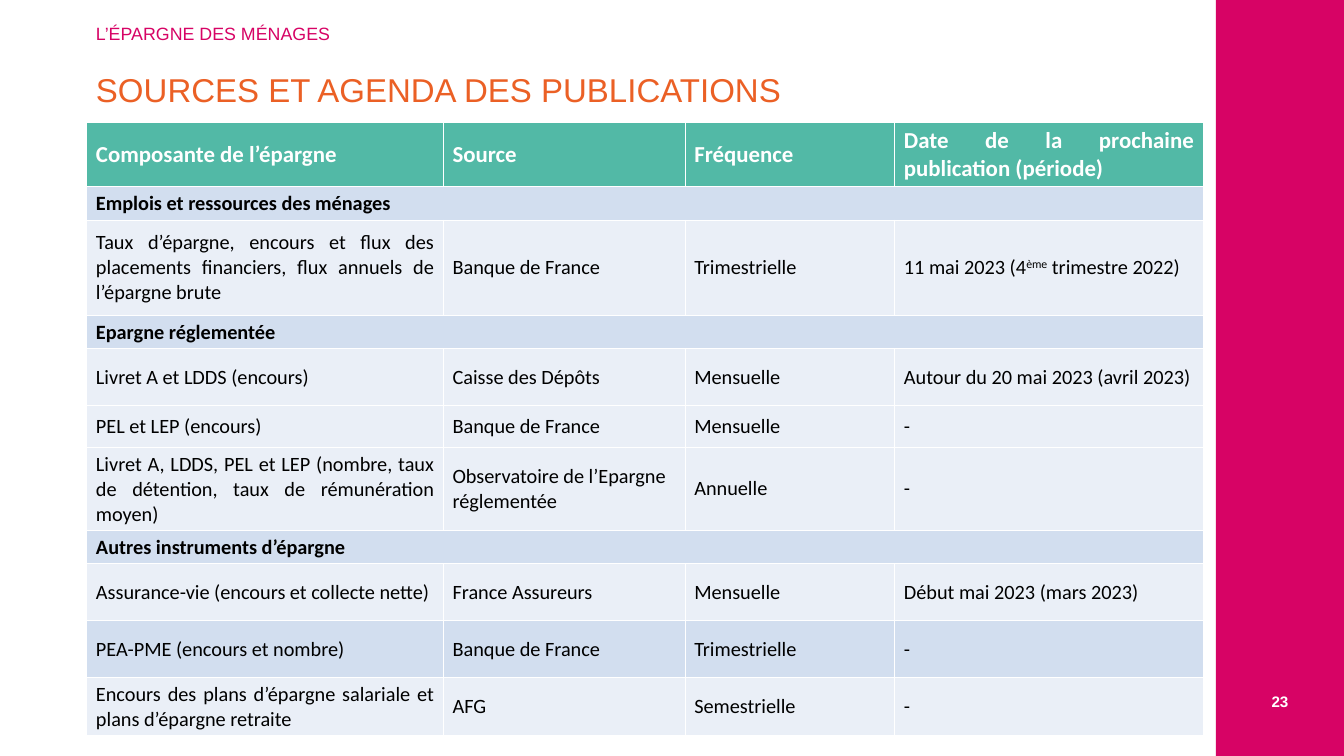
"""Build the slide listing household savings sources and their publication dates."""
import dataclasses
import typing

import pptx
import pptx.dml.color
import pptx.enum.shapes
import pptx.enum.text
import pptx.util

Pt = pptx.util.Pt
Align = pptx.enum.text.PP_ALIGN


@dataclasses.dataclass(frozen=True)
class Theme:
    """Colours, fonts and type sizes of the slide."""
    magenta: str = "D70365"
    orange: str = "EB6025"
    green: str = "52B9A6"
    band: str = "D2DEEF"
    pale: str = "EAEFF7"
    white: str = "FFFFFF"
    black: str = "000000"
    heading_font: str = "Arial"
    table_font: str = "Calibri"
    title_size: float = 26
    header_size: float = 18
    body_size: float = 16
    chapter_size: float = 14
    number_size: float = 12


@dataclasses.dataclass(frozen=True)
class Box:
    """Place and size in points."""
    left: float
    top: float
    width: float
    height: float

    def lengths(self) -> tuple[int, int, int, int]:
        """Return the four lengths for python-pptx."""
        return Pt(self.left), Pt(self.top), Pt(self.width), Pt(self.height)


@dataclasses.dataclass(frozen=True)
class Row:
    """One table row; a single text makes a section band."""
    height: float
    texts: tuple[str, ...]
    fill: str
    left_source: bool = False


THEME = Theme()
SLIDE_WIDTH, SLIDE_HEIGHT = 1058.4, 595.44
SIDEBAR = Box(957.6, 0, 100.8, SLIDE_HEIGHT)
PAGE_NUMBER = Box(957.6, 533.5, 100.8, 38.2)
CHAPTER = Box(68.4, 17.3, 358.6, 20.9)
TITLE = Box(68.4, 54.7, 863.3, 34.6)
COLUMN_WIDTHS = (280.8, 190.4, 165.1, 242.8)
SECTION_HEIGHT, ENTRY_HEIGHT = 25.9, 44.9

HEADER = Row(49.9, ("Composante de l’épargne", "Source", "Fréquence",
                    "Date de la prochaine publication (période)"), THEME.green)
ROWS = (
    HEADER,
    Row(SECTION_HEIGHT, ("Emplois et ressources des ménages",), THEME.band),
    Row(74.9, ("Taux d’épargne, encours et flux des placements financiers, "
               "flux annuels de l’épargne brute", "Banque de France",
               "Trimestrielle", "11 mai 2023 (4ème trimestre 2022)"), THEME.pale),
    Row(SECTION_HEIGHT, ("Epargne réglementée",), THEME.band),
    Row(ENTRY_HEIGHT, ("Livret A et LDDS (encours)", "Caisse des Dépôts", "Mensuelle",
                       "Autour du 20 mai 2023 (avril 2023)"), THEME.pale),
    Row(33.1, ("PEL et LEP (encours)", "Banque de France", "Mensuelle", "-"), THEME.pale),
    Row(63.4, ("Livret A, LDDS, PEL et LEP (nombre, taux de détention, "
               "taux de rémunération moyen)", "Observatoire de l’Epargne réglementée",
               "Annuelle", "-"), THEME.pale, True),
    Row(SECTION_HEIGHT, ("Autres instruments d’épargne",), THEME.band),
    Row(ENTRY_HEIGHT, ("Assurance-vie (encours et collecte nette)", "France Assureurs",
                       "Mensuelle", "Début mai 2023 (mars 2023)"), THEME.pale, True),
    Row(ENTRY_HEIGHT, ("PEA-PME (encours et nombre)", "Banque de France",
                       "Trimestrielle", "-"), THEME.band, True),
    Row(ENTRY_HEIGHT, ("Encours des plans d’épargne salariale et plans d’épargne retraite",
                       "AFG", "Semestrielle", "-"), THEME.pale, True),
)
TABLE = Box(68.4, 96.6, sum(COLUMN_WIDTHS), sum(row.height for row in ROWS))


def rgb(value: str) -> pptx.dml.color.RGBColor:
    """Turn a hex value into a colour."""
    return pptx.dml.color.RGBColor.from_string(value)


def write(frame: typing.Any, text: str, *, size: float, color: str, font: str,
          bold: bool = False, align: Align = Align.LEFT, spacing: float = 1.0,
          superscript: str = "") -> None:
    """Write one paragraph, raising the superscript part of the text."""
    frame.word_wrap = True
    paragraph = frame.paragraphs[0]
    paragraph.alignment = align
    paragraph.line_spacing = spacing
    paragraph.space_before = Pt(0)
    for part in filter(None, text.partition(superscript) if superscript else (text,)):
        run = paragraph.add_run()
        run.text = part
        run.font.size = Pt(size)
        run.font.name = font
        run.font.bold = bold
        run.font.color.rgb = rgb(color)
        if part == superscript:
            run.font._element.set("baseline", "30000")


def draw_sidebar(slide: typing.Any) -> None:
    """Draw the coloured side band and the page number."""
    sidebar = slide.shapes.add_shape(
        pptx.enum.shapes.MSO_SHAPE.RECTANGLE, *SIDEBAR.lengths())
    sidebar.shadow.inherit = False
    sidebar.fill.solid()
    sidebar.fill.fore_color.rgb = rgb(THEME.magenta)
    sidebar.line.fill.background()
    page_number = slide.shapes.add_textbox(*PAGE_NUMBER.lengths()).text_frame
    page_number.vertical_anchor = pptx.enum.text.MSO_ANCHOR.MIDDLE
    write(page_number, "23", size=THEME.number_size, color=THEME.white,
          font=THEME.heading_font, bold=True, align=Align.CENTER)


def draw_headings(slide: typing.Any) -> None:
    """Write the chapter name and the slide title."""
    chapter = slide.shapes.add_textbox(*CHAPTER.lengths()).text_frame
    title = slide.shapes.title
    title.left, title.top, title.width, title.height = TITLE.lengths()
    for frame in (chapter, title.text_frame):
        frame.auto_size = pptx.enum.text.MSO_AUTO_SIZE.NONE
        frame.vertical_anchor = pptx.enum.text.MSO_ANCHOR.MIDDLE
    write(chapter, "L’ÉPARGNE DES MÉNAGES", size=THEME.chapter_size,
          color=THEME.magenta, font=THEME.heading_font, spacing=0.9)
    write(title.text_frame, "SOURCES ET AGENDA DES PUBLICATIONS", size=THEME.title_size,
          color=THEME.orange, font=THEME.heading_font, align=Align.JUSTIFY, spacing=0.9)


def draw_agenda(slide: typing.Any) -> None:
    """Draw the table of sources and publication dates."""
    agenda = slide.shapes.add_table(
        len(ROWS), len(COLUMN_WIDTHS), *TABLE.lengths()).table
    for column, width in zip(agenda.columns, COLUMN_WIDTHS):
        column.width = Pt(width)
    for index, row in enumerate(ROWS):
        agenda.rows[index].height = Pt(row.height)
        is_header, is_section = row is HEADER, len(row.texts) == 1
        for cell in agenda.rows[index].cells:
            cell.fill.solid()
            cell.fill.fore_color.rgb = rgb(row.fill)
            cell.vertical_anchor = pptx.enum.text.MSO_ANCHOR.MIDDLE
        if is_section:
            agenda.cell(index, 0).merge(agenda.cell(index, len(COLUMN_WIDTHS) - 1))
        for position, text in enumerate(row.texts):
            write(agenda.cell(index, position).text_frame, text,
                  size=THEME.header_size if is_header else THEME.body_size,
                  color=THEME.white if is_header else THEME.black,
                  font=THEME.table_font, bold=is_header or is_section,
                  align=Align.LEFT if row.left_source and position == 1 else Align.JUSTIFY,
                  superscript="ème")


def main() -> None:
    """Build and save the presentation."""
    presentation = pptx.Presentation()
    presentation.slide_width, presentation.slide_height = Pt(SLIDE_WIDTH), Pt(SLIDE_HEIGHT)
    slide = presentation.slides.add_slide(presentation.slide_layouts.get_by_name("Title Only"))
    draw_sidebar(slide)
    draw_headings(slide)
    draw_agenda(slide)
    presentation.save("out.pptx")


if __name__ == "__main__":
    main()
